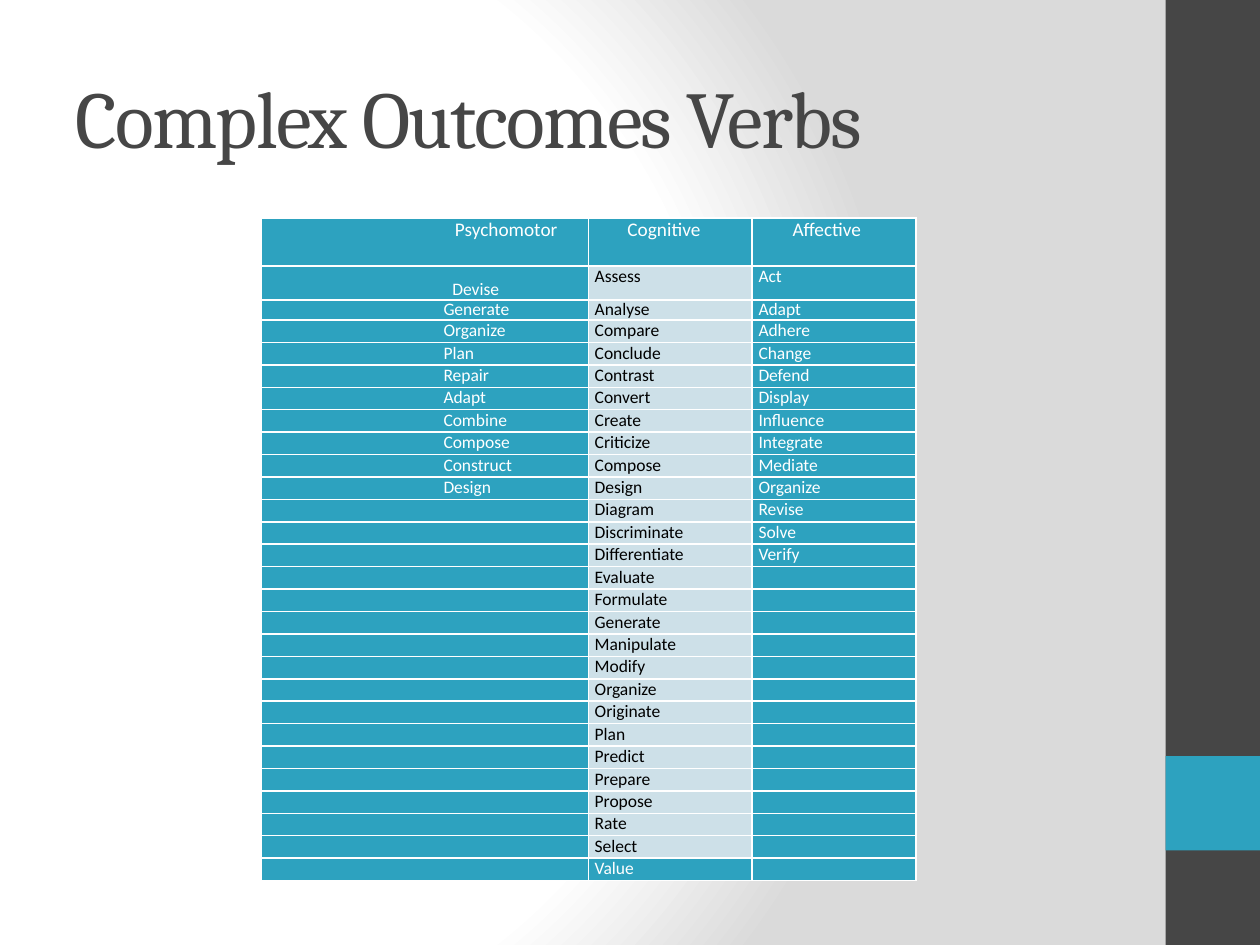
"""Build the Complex Outcomes Verbs slide with its three-column verb table."""
import itertools

import lxml.etree
import pptx
import pptx.dml.color
import pptx.enum.shapes
import pptx.enum.text
import pptx.oxml
import pptx.oxml.ns
import pptx.util

Inches = pptx.util.Inches
Pt = pptx.util.Pt
RGBColor = pptx.dml.color.RGBColor

WHITE = RGBColor(0xFF, 0xFF, 0xFF)
BLACK = RGBColor(0, 0, 0)
SILVER = RGBColor(0xDA, 0xDA, 0xDA)
CHARCOAL = RGBColor(0x46, 0x46, 0x46)
TEAL = RGBColor(0x2D, 0xA2, 0xBF)
PALE_BLUE = RGBColor(0xCD, 0xE0, 0xE8)

HEADINGS = ("Psychomotor", "Cognitive", "Affective")
HEADING_INDENTS = (1.54, 0.31, 0.32)
VERB_INDENTS = (1.45, 0.05, 0.05)
COLUMN_WIDTHS = (2.6, 1.3, 1.3)
PSYCHOMOTOR = "Devise Generate Organize Plan Repair Adapt Combine Compose Construct Design".split()
COGNITIVE = (
    "Assess Analyse Compare Conclude Contrast Convert Create Criticize Compose "
    "Design Diagram Discriminate Differentiate Evaluate Formulate Generate "
    "Manipulate Modify Organize Originate Plan Predict Prepare Propose Rate Select Value"
).split()
AFFECTIVE = (
    "Act Adapt Adhere Change Defend Display Influence Integrate Mediate "
    "Organize Revise Solve Verify"
).split()


class SlideBuilder:
    """Holds the style and the current slide."""

    title_font = "Cambria"
    body_font = "Calibri"
    border_width = Pt(1)

    def __init__(self, presentation):
        self.slide = presentation.slides.add_slide(presentation.slide_layouts[6])

    def background(self, stops):
        stop_xml = "".join(
            f'<a:gs pos="{position * 1000}"><a:srgbClr val="{color}"/></a:gs>'
            for position, color in stops
        )
        background = pptx.oxml.parse_xml(
            f'<p:bg {pptx.oxml.ns.nsdecls("p", "a")}><p:bgPr>'
            f'<a:gradFill rotWithShape="1"><a:gsLst>{stop_xml}</a:gsLst>'
            '<a:path path="circle"><a:fillToRect l="20000" t="50000" r="100000" b="50000"/>'
            "</a:path></a:gradFill><a:effectLst/></p:bgPr></p:bg>"
        )
        self.slide.element.cSld.insert(0, background)

    def block(self, left, top, width, height, color):
        shape = self.slide.shapes.add_shape(
            pptx.enum.shapes.MSO_SHAPE.RECTANGLE,
            Inches(left), Inches(top), Inches(width), Inches(height),
        )
        shape.shadow.inherit = False
        shape.fill.solid()
        shape.fill.fore_color.rgb = color
        shape.line.fill.background()

    def title(self, text, left, top, width, height):
        shape = self.slide.shapes.add_textbox(
            Inches(left), Inches(top), Inches(width), Inches(height)
        )
        frame = shape.text_frame
        frame.word_wrap = True
        frame.vertical_anchor = pptx.enum.text.MSO_ANCHOR.MIDDLE
        paragraph = frame.paragraphs[0]
        run = paragraph.add_run()
        run.text = text
        self.font(paragraph, self.title_font, 46, CHARCOAL)
        run.font.size = Pt(46)
        run.font._element.set("spc", "-100")

    def font(self, paragraph, name, size, color):
        paragraph.font.name = name
        paragraph.font.size = Pt(size)
        paragraph.font.color.rgb = color

    def table(self, left, top, widths, heights):
        table = self.slide.shapes.add_table(
            len(heights), len(widths),
            Inches(left), Inches(top), Inches(sum(widths)), Inches(sum(heights)),
        ).table
        table.first_row = False
        table.horz_banding = False
        for column, width in zip(table.columns, widths):
            column.width = Inches(width)
        for row, height in zip(table.rows, heights):
            row.height = Inches(height)
        return table

    def cell(self, cell, text, fill, color, size, indent, line_spacing=None):
        cell.margin_left = cell.margin_right = cell.margin_top = cell.margin_bottom = 0
        self.borders(cell)
        cell.fill.solid()
        cell.fill.fore_color.rgb = fill
        paragraph = cell.text_frame.paragraphs[0]
        if text:
            paragraph.text = text
            self.font(paragraph, self.body_font, size, color)
            properties = paragraph._p.get_or_add_pPr()
            properties.set("marL", str(Inches(indent)))
            properties.set("indent", "0")
            if line_spacing:
                paragraph.line_spacing = Pt(line_spacing)
        else:
            end = lxml.etree.SubElement(paragraph._p, pptx.oxml.ns.qn("a:endParaRPr"))
            end.set("sz", "800")

    def borders(self, cell):
        properties = cell._tc.get_or_add_tcPr()
        for side in "LRTB":
            properties.append(pptx.oxml.parse_xml(
                f'<a:ln{side} {pptx.oxml.ns.nsdecls("a")} w="{self.border_width}">'
                f'<a:solidFill><a:srgbClr val="{WHITE}"/></a:solidFill></a:ln{side}>'
            ))


def main():
    presentation = pptx.Presentation()
    presentation.slide_width = Inches(10)
    presentation.slide_height = Inches(7.5)
    builder = SlideBuilder(presentation)
    builder.background(((0, WHITE), (75, WHITE), (100, SILVER)))
    builder.block(9.25, 0, 0.75, 7.5, CHARCOAL)
    builder.block(9.25, 6, 0.75, 0.75, TEAL)
    builder.title("Complex Outcomes Verbs", 0.5, 0.3, 8.33, 1.25)

    verb_rows = list(itertools.zip_longest(PSYCHOMOTOR, COGNITIVE, AFFECTIVE, fillvalue=""))
    heights = [0.38, 0.27, 0.16] + [0.178] * (len(verb_rows) - 2)
    table = builder.table(2.07, 1.73, COLUMN_WIDTHS, heights)
    for column, heading in enumerate(HEADINGS):
        builder.cell(table.cell(0, column), heading, TEAL, WHITE, 11, HEADING_INDENTS[column])
    for row, verbs in enumerate(verb_rows, start=1):
        for column, verb in enumerate(verbs):
            pale = column == 1 and row < len(verb_rows)
            indent = VERB_INDENTS[column]
            line_spacing = 11.5 if row == 2 else None
            if verb == "Devise":
                indent, line_spacing = 1.52, 19.4
            builder.cell(
                table.cell(row, column), verb, PALE_BLUE if pale else TEAL,
                BLACK if pale else WHITE, 10, indent, line_spacing,
            )
    presentation.save("out.pptx")


if __name__ == "__main__":
    main()
